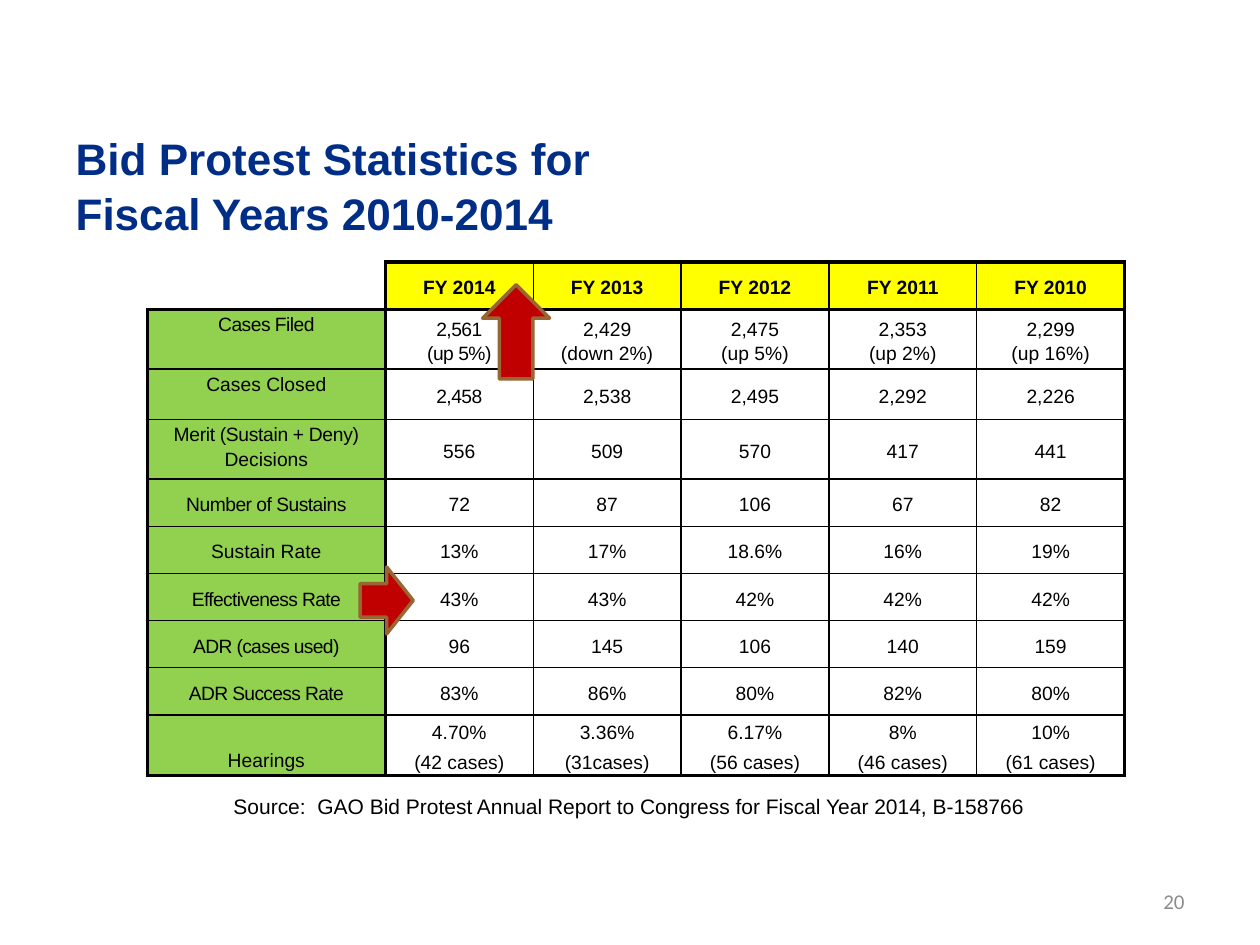
from lxml import etree
from pptx import Presentation
from pptx import util as u
from pptx.dml.color import RGBColor
from pptx.enum import shapes, text
from pptx.oxml import ns

ALIGN = text.PP_ALIGN
ANCHOR = text.MSO_ANCHOR
YEARS = ["", "FY 2014", "FY 2013", "FY 2012", "FY 2011", "FY 2010"]
ROWS = [
    YEARS,
    ["Cases Filed", "2,561\n(up 5%)", "2,429\n(down 2%)", "2,475\n(up 5%)",
     "2,353\n(up 2%)", "2,299\n(up 16%)"],
    ["Cases Closed", "2,458", "2,538", "2,495", "2,292", "2,226"],
    ["Merit (Sustain + Deny)\vDecisions", "556", "509", "570", "417", "441"],
    ["Number of Sustains", "72", "87", "106", "67", "82"],
    ["Sustain Rate", "13%", "17%", "18.6%", "16%", "19%"],
    ["Effectiveness Rate", "43%", "43%", "42%", "42%", "42%"],
    ["ADR (cases used)", "96", "145", "106", "140", "159"],
    ["ADR Success Rate", "83%", "86%", "80%", "82%", "80%"],
    ["", "4.70%", "3.36%", "6.17%", "8%", "10%"],
    ["Hearings", "(42 cases)", "(31cases)", "(56 cases)", "(46 cases)", "(61 cases)"],
]
TALL = [0.96, 1.2, 1.02, 1.2] + [0.95] * 5 + [0.61] * 2
WIDE = [4.8] + [2.98] * 5
TIGHT = {(1, 0): -30, (1, 1): -30, (2, 1): -30, (3, 0): -20, (4, 0): -30,
         (6, 0): -40, (7, 0): -40, (8, 0): -40}
HIGH = {(1, 0), (2, 0), (3, 0), (10, 0)}


def tint(code):
    """Turn a hex string into a colour."""
    return RGBColor.from_string(code)


class Deck:
    """Holds the style and the current slide."""

    face, ink, navy = "Arial", "000000", "002D86"
    head, side = "FFFF00", "92D050"
    red, brown, grey = "C00000", "996633", "8C8C8C"
    thin, thick = 1, 2.25

    def __init__(self):
        """Start a file with one title-only slide."""
        self.prs = Presentation()
        self.prs.slide_width, self.prs.slide_height = u.Cm(25.4), u.Cm(19.05)
        self.slide = self.prs.slides.add_slide(self.prs.slide_layouts[5])

    def style(self, para, size, color, bold=False, face=None, align=ALIGN.CENTER):
        """Format a paragraph and its runs."""
        para.alignment = align
        for run in para.runs:
            font = run.font
            font.name, font.size, font.bold = face or self.face, u.Pt(size), bold
            font.color.rgb = tint(color)

    def title(self, words, *box):
        """Place and format the title."""
        shape = self.slide.shapes.title
        shape.left, shape.top, shape.width, shape.height = map(u.Cm, box)
        frame = shape.text_frame
        frame.text = words
        frame.auto_size = text.MSO_AUTO_SIZE.NONE
        frame.vertical_anchor = ANCHOR.MIDDLE
        para = frame.paragraphs[0]
        para.line_spacing = 1.05
        self.style(para, 25.2, self.navy, True, align=ALIGN.LEFT)

    def label(self, words, *box, anchor=ANCHOR.TOP, color=ink, **look):
        """Add a text box."""
        frame = self.slide.shapes.add_textbox(*map(u.Cm, box)).text_frame
        frame.word_wrap = True
        frame.vertical_anchor = anchor
        frame.text = words
        self.style(frame.paragraphs[0], 12, color, **look)

    def arrow(self, kind, *box):
        """Add a red block arrow."""
        shape = self.slide.shapes.add_shape(kind, *map(u.Cm, box))
        shape.shadow.inherit = False
        shape.fill.solid()
        shape.fill.fore_color.rgb = tint(self.red)
        shape.line.color.rgb = tint(self.brown)
        shape.line.width = u.Pt(2)

    def edge(self, cell, side, width):
        """Draw one cell border, or clear it when width is zero."""
        props = cell._tc.get_or_add_tcPr()
        line = etree.SubElement(props, ns.qn("a:ln" + side))
        if width:
            line.set("w", str(u.Pt(width)))
            fill = etree.SubElement(line, ns.qn("a:solidFill"))
            etree.SubElement(fill, ns.qn("a:srgbClr"), val=self.ink)
        else:
            etree.SubElement(line, ns.qn("a:noFill"))

    def frame(self, cell, row, col):
        """Draw the four borders that a cell's place calls for."""
        for side, step in (("L", 0), ("R", 1)):
            width = self.thick if col + step in (0, 1, len(WIDE)) else self.thin
            self.edge(cell, side, 0 if (row, col, side) == (0, 0, "L") else width)
        for side, step in (("T", 0), ("B", 1)):
            rule = row + step
            width = self.thick if rule in (0, 1, len(TALL)) else self.thin
            bare = rule == len(TALL) - 1 or (rule, col) == (0, 0)
            self.edge(cell, side, 0 if bare else width)

    def cell(self, cell, words, row, col):
        """Fill and format one cell."""
        self.frame(cell, row, col)
        shade = self.head if row == 0 and col else self.side if row and not col else None
        if shade:
            cell.fill.solid()
            cell.fill.fore_color.rgb = tint(shade)
        else:
            cell.fill.background()
        cell.margin_left = cell.margin_right = cell.margin_top = u.Cm(0.03)
        cell.margin_bottom = 0
        cell.vertical_anchor = ANCHOR.TOP if (row, col) in HIGH else ANCHOR.MIDDLE
        cell.text_frame.text = words
        for para in cell.text_frame.paragraphs:
            para.line_spacing = u.Pt(15.2) if row == 9 else 1.15
            self.style(para, 11, self.ink, row == 0)
            if not para.runs:
                etree.SubElement(para._p, ns.qn("a:endParaRPr"), sz="1100")
            elif (row, col) in TIGHT:
                props = para.runs[0]._r.get_or_add_rPr()
                props.set("spc", str(TIGHT[row, col]))

    def table(self, rows, left, top):
        """Add the statistics table."""
        box = map(u.Cm, (left, top, sum(WIDE), sum(TALL)))
        grid = self.slide.shapes.add_table(len(rows), len(WIDE), *box).table
        grid.first_row = grid.horz_banding = False
        for col, wide in zip(grid.columns, WIDE):
            col.width = u.Cm(wide)
        for r, (line, tall) in enumerate(zip(rows, TALL)):
            grid.rows[r].height = u.Cm(tall)
            for c, words in enumerate(line):
                self.cell(grid.cell(r, c), words, r, c)


def main():
    """Build and save the slide."""
    deck = Deck()
    deck.title("Bid Protest Statistics for \vFiscal Years 2010-2014", 1.27, 2.54, 22.86, 2.34)
    deck.table(ROWS, 2.97, 5.28)
    deck.arrow(shapes.MSO_SHAPE.UP_ARROW, 9.73, 5.74, 1.35, 1.9)
    deck.arrow(shapes.MSO_SHAPE.RIGHT_ARROW, 7.26, 11.43, 1.07, 1.35)
    deck.label("Source:  GAO Bid Protest Annual Report to Congress for Fiscal Year 2014, B-158766",
               2.74, 15.88, 19.89, 0.76)
    deck.label("20", 18.21, 17.65, 5.92, 1.02, anchor=ANCHOR.MIDDLE, color=deck.grey,
               face="Calibri", align=ALIGN.RIGHT)
    deck.prs.save("out.pptx")


if __name__ == "__main__":
    main()
